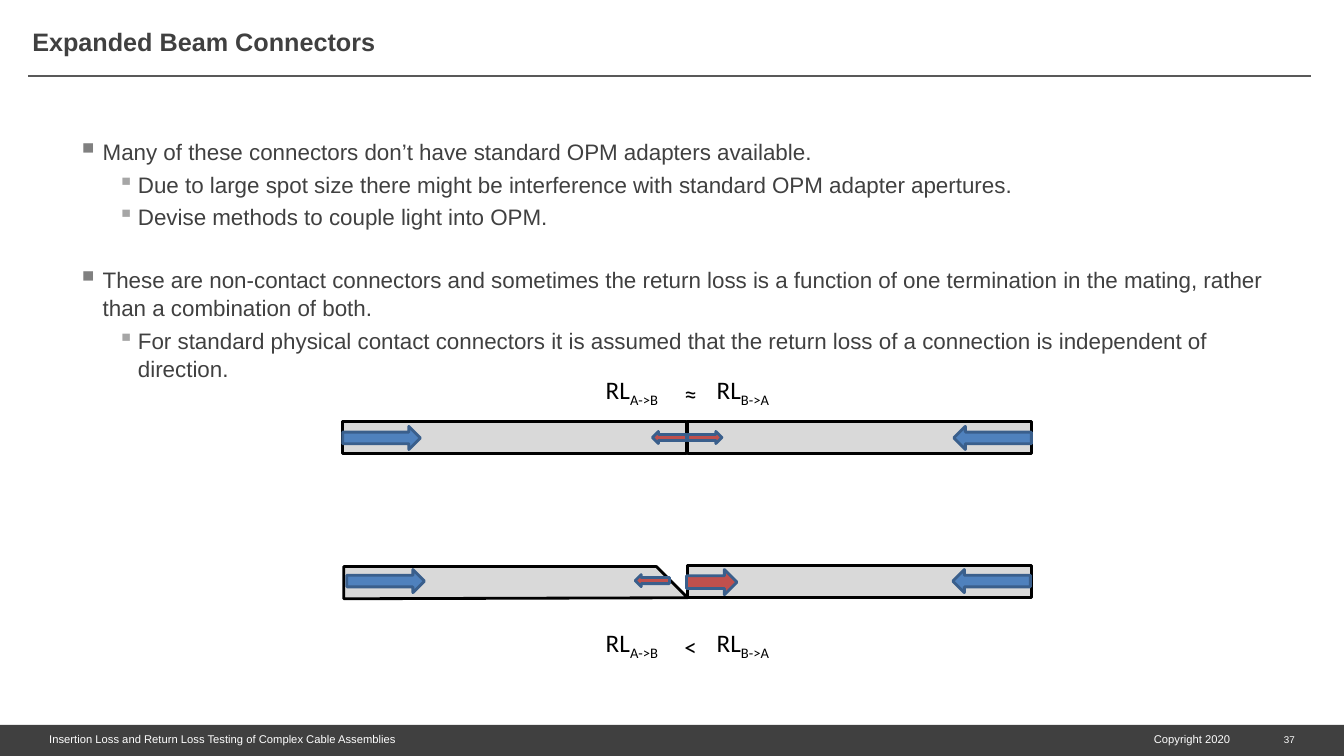
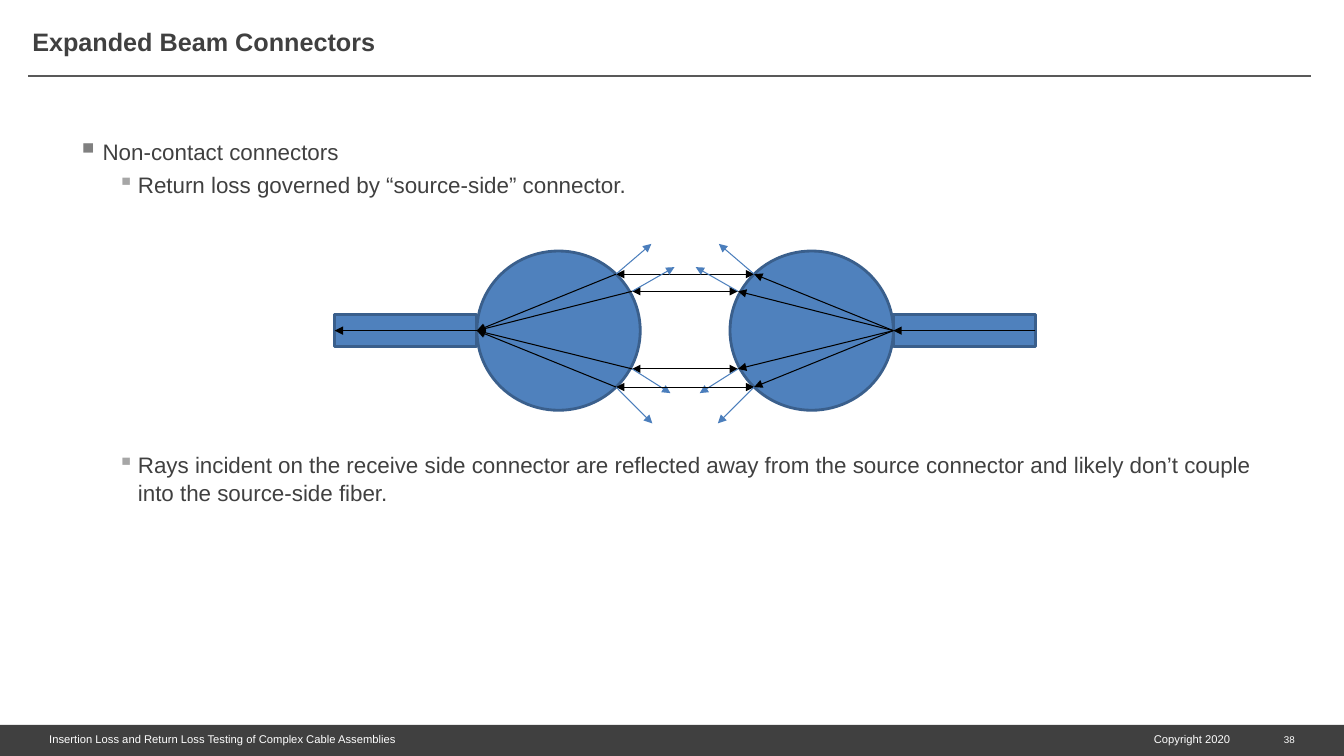
from lxml import etree
from pptx import Presentation
from pptx.dml.color import RGBColor
from pptx.enum.shapes import MSO_CONNECTOR, MSO_SHAPE
from pptx.enum.text import MSO_ANCHOR, PP_ALIGN
from pptx.oxml.ns import qn
from pptx.util import Inches, Pt

RECTANGLE = MSO_SHAPE.RECTANGLE
OVAL = MSO_SHAPE.OVAL
RIGHT_ARROW = MSO_SHAPE.RIGHT_ARROW
LEFT_ARROW = MSO_SHAPE.LEFT_ARROW
STRAIGHT = MSO_CONNECTOR.STRAIGHT
LEFT, RIGHT = PP_ALIGN.LEFT, PP_ALIGN.RIGHT
TOP, MIDDLE = MSO_ANCHOR.TOP, MSO_ANCHOR.MIDDLE

WHITE = RGBColor(0xFF, 0xFF, 0xFF)
BLACK = RGBColor(0x00, 0x00, 0x00)
CHARCOAL = RGBColor(0x40, 0x40, 0x40)
RULE_GRAY = RGBColor(0x59, 0x59, 0x59)
FIBER_GRAY = RGBColor(0xD9, 0xD9, 0xD9)
BLUE = RGBColor(0x4F, 0x81, 0xBD)
DARK_BLUE = RGBColor(0x3A, 0x5F, 0x8C)
RAY_BLUE = RGBColor(0x4B, 0x7E, 0xBC)
RED = RGBColor(0xC0, 0x50, 0x4D)

TITLE_FONT = {"name": "Arial", "size": Pt(18), "bold": True}
BODY_FONT = {"name": "Arial", "size": Pt(16)}
FOOTER_FONT = {"name": "Arial", "size": Pt(8)}
NUMBER_FONT = {"name": "Arial", "size": Pt(7)}
FORMULA_FONT = {"name": "Calibri", "size": Pt(18)}
BULLETS = [
    {"margin": 0.25, "hanging": -0.25, "color": "808080", "size": "130000"},
    {"margin": 0.6, "hanging": -0.2, "color": "A6A6A6", "size": "100000"},
]


def paint(shape, fill, outline=None):
    shape.shadow.inherit = False
    shape.fill.solid()
    shape.fill.fore_color.rgb = fill
    if outline is None:
        shape.line.fill.background()
    else:
        shape.line.color.rgb = outline
        shape.line.width = Pt(2)
    return shape


def add_line(slide, begin, end, color, width=0.75, arrows=("tailEnd",)):
    line = slide.shapes.add_connector(STRAIGHT, *map(Inches, begin + end))
    line.line.color.rgb = color
    line.line.width = Pt(width)
    properties = line.element.spPr
    for arrow in arrows:
        etree.SubElement(properties.find(qn("a:ln")), qn(f"a:{arrow}"), type="triangle")
    etree.SubElement(properties, qn("a:effectLst"))
    return line


presentation = Presentation()
presentation.slide_width = Inches(13.33)
presentation.slide_height = Inches(7.5)
layout = presentation.slide_layouts[5]
for placeholder in list(layout.placeholders):
    if placeholder.placeholder_format.idx != 0:
        placeholder.element.getparent().remove(placeholder.element)
layout_title = layout.placeholders[0]
layout_title.left, layout_title.top = Inches(0.22), Inches(0.15)
layout_title.width, layout_title.height = Inches(12.89), Inches(0.52)

contents = [
    [
        (0, 0, "Many of these connectors don’t have standard OPM adapters available."),
        (1, 0, "Due to large spot size there might be interference with standard OPM adapter apertures."),
        (1, 0, "Devise methods to couple light into OPM."),
        (0, 22, "These are non-contact connectors and sometimes the return loss is a function of one "
                "termination in the mating, rather than a combination of both."),
        (1, 0, "For standard physical contact connectors it is assumed that the return loss of a "
               "connection is independent of direction."),
    ],
    [
        (0, 0, "Non-contact connectors"),
        (1, 0, "Return loss governed by “source-side” connector."),
        (1, 177, "Rays incident on the receive side connector are reflected away from the source "
                 "connector and likely don’t couple into the source-side fiber."),
    ],
]
slides = []
for content in contents:
    slide = presentation.slides.add_slide(layout)
    slides.append(slide)
    title_frame = slide.shapes.title.text_frame
    title_frame.text = "Expanded Beam Connectors"
    title_frame.vertical_anchor = MIDDLE
    title_frame.paragraphs[0].alignment = LEFT
    title_font = title_frame.paragraphs[0].runs[0].font
    title_font.color.rgb = CHARCOAL
    for name, value in TITLE_FONT.items():
        setattr(title_font, name, value)

    body = slide.shapes.add_textbox(Inches(0.67), Inches(1.31), Inches(12), Inches(5.67))
    body_frame = body.text_frame
    body_frame.word_wrap = True
    for index, (level, gap, text) in enumerate(content):
        paragraph = body_frame.add_paragraph() if index else body_frame.paragraphs[0]
        paragraph.level = level
        bullet = BULLETS[level]
        properties = paragraph._p.get_or_add_pPr()
        properties.set("marL", str(Inches(bullet["margin"])))
        properties.set("indent", str(Inches(bullet["hanging"])))
        bullet_color = etree.SubElement(properties, qn("a:buClr"))
        etree.SubElement(bullet_color, qn("a:srgbClr"), val=bullet["color"])
        etree.SubElement(properties, qn("a:buSzPct"), val=bullet["size"])
        etree.SubElement(properties, qn("a:buChar"), char="▪")
        paragraph.line_spacing = 1.05
        paragraph.space_after = Pt(3)
        if gap:
            paragraph.space_before = Pt(gap)
        run = paragraph.add_run()
        run.text = text
        run.font.color.rgb = CHARCOAL
        for name, value in BODY_FONT.items():
            setattr(run.font, name, value)

contact_slide, lens_slide = slides

band = contact_slide.shapes.add_shape(RECTANGLE, 0, Inches(7.19), Inches(13.33), Inches(0.31))
paint(band, CHARCOAL)
rule = add_line(contact_slide, (0.28, 0.75), (13, 0.75), RULE_GRAY, 1.5, ())
shared_shapes = [band, rule]

for left, top in [(3.4, 4.18), (6.82, 4.18), (6.82, 5.61)]:
    fiber = contact_slide.shapes.add_shape(RECTANGLE, *map(Inches, (left, top, 3.41, 0.32)))
    paint(fiber, FIBER_GRAY, BLACK)
outline = contact_slide.shapes.build_freeform(Inches(3.41), Inches(5.62))
corners = [(6.51, 5.62), (6.82, 5.93), (3.41, 5.94)]
outline.add_line_segments([(Inches(x), Inches(y)) for x, y in corners], close=True)
paint(outline.convert_to_shape(), FIBER_GRAY, BLACK)

arrows = [
    (RIGHT_ARROW, (3.4, 4.23, 0.77, 0.23), BLUE),
    (LEFT_ARROW, (9.46, 4.23, 0.77, 0.23), BLUE),
    (LEFT_ARROW, (6.47, 4.28, 0.34, 0.12), RED),
    (RIGHT_ARROW, (6.82, 4.28, 0.34, 0.12), RED),
    (RIGHT_ARROW, (3.44, 5.65, 0.77, 0.23), BLUE),
    (LEFT_ARROW, (9.45, 5.65, 0.77, 0.23), BLUE),
    (LEFT_ARROW, (6.3, 5.7, 0.34, 0.12), RED),
    (RIGHT_ARROW, (6.81, 5.65, 0.5, 0.25), RED),
]
for kind, box, fill in arrows:
    paint(contact_slide.shapes.add_shape(kind, *map(Inches, box)), fill, DARK_BLUE)

lens_shapes = []
for kind, box in [
    (RECTANGLE, (3.32, 3.12, 1.41, 0.32)),
    (RECTANGLE, (8.86, 3.12, 1.41, 0.32)),
    (OVAL, (4.73, 2.49, 1.62, 1.58)),
    (OVAL, (7.24, 2.49, 1.62, 1.58)),
]:
    shape = lens_slide.shapes.add_shape(kind, *map(Inches, box))
    lens_shapes.append(paint(shape, BLUE, DARK_BLUE))
left_fiber, right_fiber = lens_shapes[:2]

left_focus, right_focus = (4.73, 3.28), (8.86, 3.28)
for fiber, begin, end in [
    (right_fiber, (10.27, 3.28), right_focus),
    (left_fiber, left_focus, (3.32, 3.28)),
]:
    axis = add_line(lens_slide, begin, end, BLACK)
    axis.begin_connect(fiber, 3)
    axis.end_connect(fiber, 1)

mirror_sum = 13.59
for x, y, reflected_x, reflected_y in [
    (7.48, 2.72, 7.13, 2.42),
    (7.32, 2.89, 6.9, 2.65),
    (7.32, 3.66, 6.94, 3.9),
    (7.48, 3.84, 7.12, 4.2),
]:
    right_point, left_point = (x, y), (mirror_sum - x, y)
    add_line(lens_slide, left_point, right_point, BLACK, arrows=("headEnd", "tailEnd"))
    add_line(lens_slide, right_focus, right_point, BLACK).begin_connect(right_fiber, 1)
    add_line(lens_slide, left_point, left_focus, BLACK).end_connect(left_fiber, 3)
    add_line(lens_slide, right_point, (reflected_x, reflected_y), RAY_BLUE)
    add_line(lens_slide, left_point, (mirror_sum - reflected_x, reflected_y), RAY_BLUE)

footers = [
    (contact_slide, (0.39, 7.22, 10.17, 0.27),
     ["Insertion Loss and Return Loss Testing of Complex Cable Assemblies"], FOOTER_FONT, WHITE, LEFT, TOP),
    (contact_slide, (9.49, 7.22, 2.81, 0.27), ["Copyright 2020"], FOOTER_FONT, WHITE, RIGHT, TOP),
]
texts = list(footers)
for number, slide in enumerate(slides, 37):
    texts.append((slide, (9.83, 7.2, 3.11, 0.27), [str(number)], NUMBER_FONT, WHITE, RIGHT, MIDDLE))
for top, sign in [(3.66, "≈"), (6.17, "<")]:
    for left, offset, width, parts in [
        (5.91, 0, 0.77, ["RL", "A->B"]),
        (6.69, 0.04, 0.32, [sign]),
        (7.01, 0, 0.77, ["RL", "B->A"]),
    ]:
        box = (left, top + offset, width, 0.4)
        texts.append((contact_slide, box, parts, FORMULA_FONT, BLACK, LEFT, TOP))

for index, (slide, box, parts, font, color, alignment, anchor) in enumerate(texts):
    text_box = slide.shapes.add_textbox(*map(Inches, box))
    frame = text_box.text_frame
    frame.word_wrap = len(parts) == 1
    frame.vertical_anchor = anchor
    paragraph = frame.paragraphs[0]
    paragraph.alignment = alignment
    for part_index, part in enumerate(parts):
        run = paragraph.add_run()
        run.text = part
        run.font.color.rgb = color
        for name, value in font.items():
            setattr(run.font, name, value)
        if part_index:
            run.font._element.set("baseline", "-25000")
    if index < len(footers):
        shared_shapes.append(text_box)

for shape in shared_shapes:
    layout.shapes.element.append(shape.element)

presentation.save("out.pptx")
